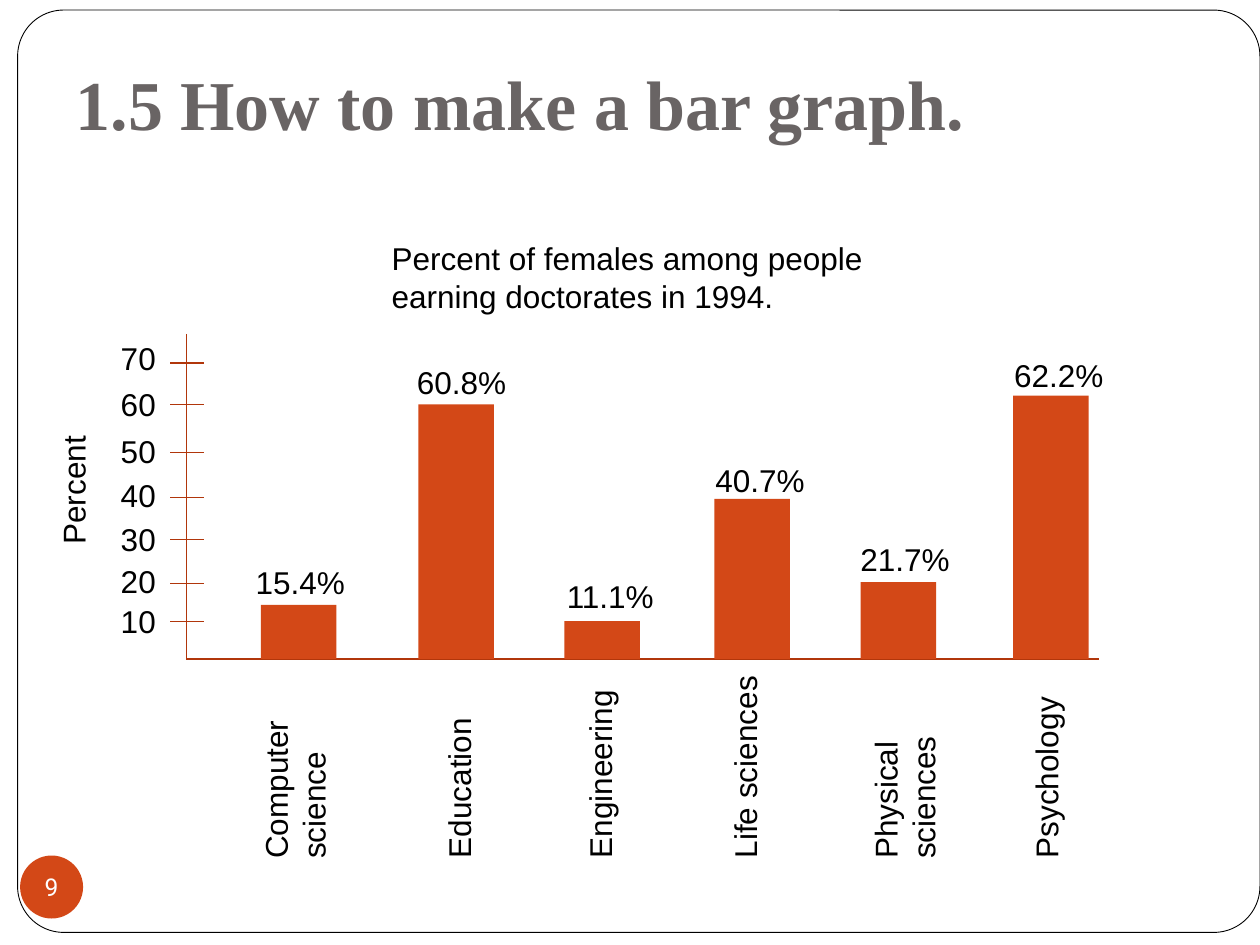
from typing import NamedTuple

from lxml.etree import SubElement
from pptx import Presentation
from pptx.dml.color import RGBColor
from pptx.enum.shapes import MSO_CONNECTOR as Connector, MSO_SHAPE as Preset
from pptx.enum.text import MSO_ANCHOR as Anchor, PP_ALIGN as Align
from pptx.oxml.ns import qn
from pptx.util import Inches, Pt

BLACK, WHITE, GREY = "000000", "FFFFFF", "696464"
ORANGE, AXIS_COLOR = "D34817", "B1360B"
AXIS_X, AXIS_TOP, AXIS_RIGHT, BASELINE = 1.48, 2.65, 8.72, 5.23
TICK_LEFT, TICK_RIGHT = 1.35, 1.62
BAR_WIDTH, LINE_HEIGHT = 0.6, 0.4


class Box(NamedTuple):
    left: float
    top: float
    width: float
    height: float


class Tick(NamedTuple):
    value: int
    y: float
    label_top: float


class Bar(NamedTuple):
    percent: str
    left: float
    top: float
    percent_left: float
    percent_top: float
    category: str
    category_box: Box


TICKS = [
    Tick(10, 4.93, 4.73),
    Tick(20, 4.63, 4.41),
    Tick(30, 4.28, 4.08),
    Tick(40, 3.95, 3.73),
    Tick(50, 3.59, 3.38),
    Tick(60, 3.21, 3.01),
    Tick(70, 2.88, 2.64),
]

BARS = [
    Bar("15.4%", 2.07, 4.8, 1.93, 4.42, "Computer science", Box(1.52, 5.74, 1.64, 0.71)),
    Bar("60.8%", 3.32, 3.21, 3.21, 2.83, "Education", Box(2.82, 5.89, 1.64, 0.4)),
    Bar("11.1%", 4.48, 4.93, 4.4, 4.53, "Engineering", Box(3.94, 5.89, 1.64, 0.4)),
    Bar("40.7%", 5.67, 3.96, 5.58, 3.61, "Life sciences", Box(5.04, 5.84, 1.74, 0.4)),
    Bar("21.7%", 6.83, 4.62, 6.73, 4.24, "Physical sciences", Box(6.31, 5.69, 1.74, 0.71)),
    Bar("62.2%", 8.04, 3.14, 7.95, 2.78, "Psychology", Box(7.43, 5.84, 1.74, 0.4)),
]


def color(value: str) -> RGBColor:
    return RGBColor.from_string(value)


def inches(box: Box) -> list:
    return [Inches(length) for length in box]


def set_font(paragraph, name: str, size: float, hex_color: str, bold: bool = False) -> None:
    font = paragraph.font
    font.name, font.size, font.bold = name, Pt(size), bold
    font.color.rgb = color(hex_color)


def add_label(shapes, text: str, box: Box, rotation: int = 0) -> None:
    shape = shapes.add_textbox(*inches(box))
    shape.rotation = rotation
    shape.text_frame.word_wrap = True
    shape.text_frame.text = text
    set_font(shape.text_frame.paragraphs[0], "Arial", 18, BLACK)


def add_filled(shapes, preset, box: Box, fill: str):
    shape = shapes.add_shape(preset, *inches(box))
    shape.shadow.inherit = False
    shape.fill.solid()
    shape.fill.fore_color.rgb = color(fill)
    shape.line.fill.background()
    return shape


def add_line(shapes, x1: float, y1: float, x2: float, y2: float) -> None:
    line = shapes.add_connector(Connector.STRAIGHT, *[Inches(v) for v in (x1, y1, x2, y2)])
    line.line.color.rgb = color(AXIS_COLOR)
    line.line.width = Pt(0.75)
    SubElement(line.element.spPr, qn("a:effectLst"))


def add_title(slide, text: str) -> None:
    title = slide.shapes.title
    title.left, title.top, title.width, title.height = inches(Box(0.5, 0, 9, 1.25))
    frame = title.text_frame
    frame.text = text
    frame.vertical_anchor = Anchor.BOTTOM
    frame.margin_bottom = Inches(0.1)
    frame.paragraphs[0].alignment = Align.LEFT
    set_font(frame.paragraphs[0], "Times New Roman", 40, GREY, bold=True)


def add_border(slide) -> None:
    border = add_filled(slide.shapes, Preset.ROUNDED_RECTANGLE, Box(0.14, 0.08, 9.86, 7.32), WHITE)
    border.adjustments[0] = 0.05
    border.line.color.rgb = color(BLACK)
    border.line.width = Pt(0.5)
    slide.shapes.title.element.addprevious(border.element)


def add_page_number(shapes, number: int) -> None:
    badge = add_filled(shapes, Preset.OVAL, Box(0.16, 6.79, 0.5, 0.5), ORANGE)
    frame = badge.text_frame
    frame.margin_left = frame.margin_right = frame.margin_top = frame.margin_bottom = 0
    frame.word_wrap = False
    frame.vertical_anchor = Anchor.MIDDLE
    frame.text = str(number)
    frame.paragraphs[0].alignment = Align.CENTER
    set_font(frame.paragraphs[0], "Roboto", 14, WHITE)


def add_axes(shapes) -> None:
    axes = shapes.add_group_shape().shapes
    add_line(axes, AXIS_X, AXIS_TOP, AXIS_X, BASELINE)
    add_line(axes, AXIS_X, BASELINE, AXIS_RIGHT, BASELINE)
    for tick in TICKS:
        add_line(axes, TICK_LEFT, tick.y, TICK_RIGHT, tick.y)
    for tick in TICKS:
        add_label(shapes, str(tick.value), Box(0.86, tick.label_top, 0.75, LINE_HEIGHT))


def add_bar(shapes, bar: Bar) -> None:
    add_label(shapes, bar.category, bar.category_box, rotation=270)
    group = shapes.add_group_shape().shapes
    add_filled(group, Preset.RECTANGLE, Box(bar.left, bar.top, BAR_WIDTH, BASELINE - bar.top), ORANGE)
    add_label(group, bar.percent, Box(bar.percent_left, bar.percent_top, 0.96, LINE_HEIGHT))


def main() -> None:
    presentation = Presentation()
    presentation.slide_width, presentation.slide_height = Inches(10), Inches(7.5)
    slide = presentation.slides.add_slide(presentation.slide_layouts.get_by_name("Title Only"))
    shapes = slide.shapes
    add_title(slide, "1.5 How to make a bar graph.")
    add_border(slide)
    add_page_number(shapes, 9)
    add_label(shapes, "Percent of females among people earning doctorates in 1994.", Box(3.01, 1.85, 3.99, 0.71))
    add_label(shapes, "Percent", Box(-0.24, 3.4, 1.64, LINE_HEIGHT), rotation=270)
    add_axes(shapes)
    for bar in BARS:
        add_bar(shapes, bar)
    presentation.save("out.pptx")


if __name__ == "__main__":
    main()
